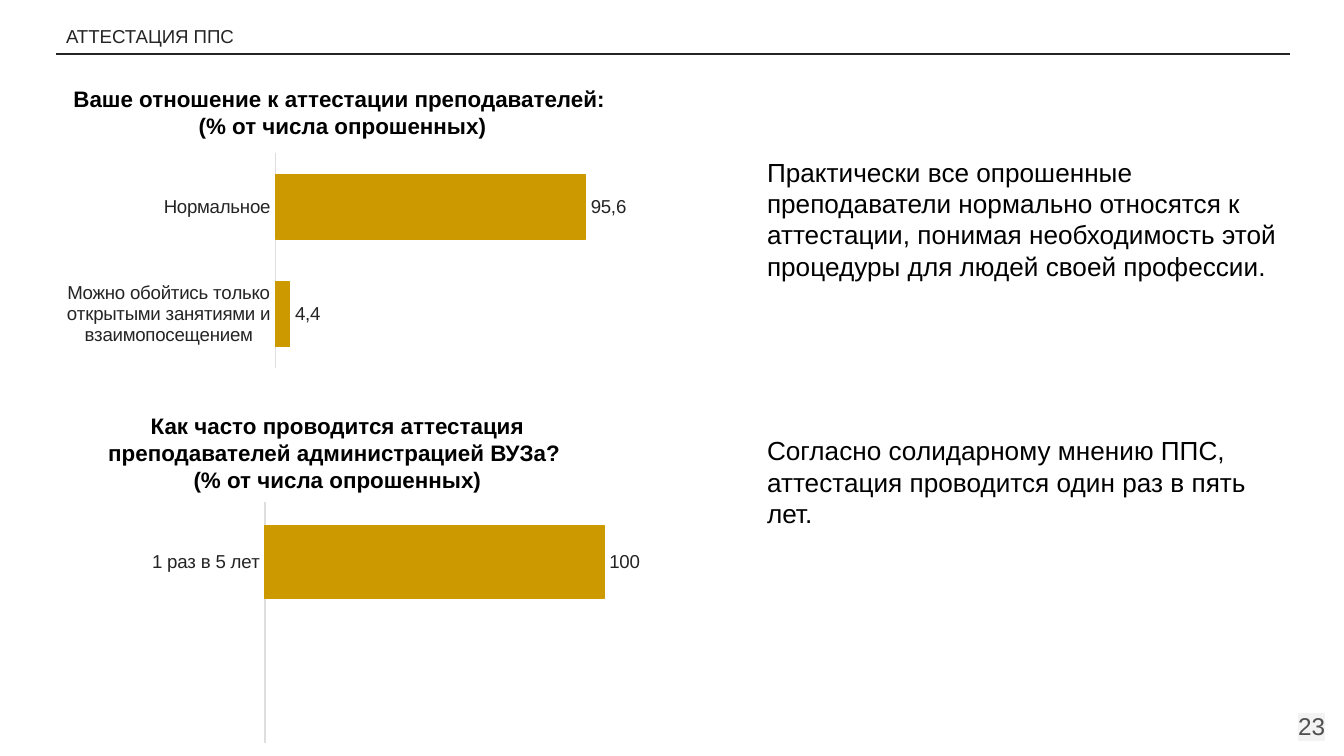
from dataclasses import dataclass
from typing import NamedTuple

from lxml.etree import SubElement
from pptx import Presentation
from pptx.chart.data import CategoryChartData
from pptx.dml.color import RGBColor
from pptx.enum.chart import XL_CHART_TYPE, XL_LABEL_POSITION, XL_TICK_MARK
from pptx.enum.shapes import MSO_CONNECTOR
from pptx.enum.text import PP_ALIGN
from pptx.oxml import parse_xml
from pptx.oxml.ns import nsdecls, qn
from pptx.util import Pt

EMU_PER_PX = 6804


@dataclass(frozen=True)
class Theme:
    font: str = "Arial"
    ink: str = "242424"
    text: str = "000000"
    bar: str = "CC9900"
    axis: str = "DEDEDE"
    number: str = "505050"
    highlight: str = "F3F3F3"
    small: int = 10
    heading: int = 12
    folio: int = 13
    body: int = 14
    hairline: float = 0.75


THEME = Theme()


class Box(NamedTuple):
    left: int
    top: int
    width: int
    height: int

    def inner(self, left, top, width, height):
        return Box(self.left + left, self.top + top, width, height)

    def emu(self):
        return [px(value) for value in self]


def px(value):
    return value * EMU_PER_PX


def color(name):
    return RGBColor.from_string(name)


def set_font(font, size, ink, bold=False):
    font.name = THEME.font
    font.size = Pt(size)
    font.bold = bold
    font.color.rgb = color(ink)


def add_text(page, box, lines, size, ink, bold=False,
             align=PP_ALIGN.LEFT, inset=13, top_inset=7, gap=0):
    frame = page.shapes.add_textbox(*box.emu()).text_frame
    frame.word_wrap = True
    frame.margin_left = frame.margin_right = px(inset)
    frame.margin_top, frame.margin_bottom = px(top_inset), px(7)
    for index, line in enumerate(lines):
        para = frame.add_paragraph() if index else frame.paragraphs[0]
        para.add_run().text = line
        para.alignment = align
        para.space_before = Pt(gap if index else 0)
        set_font(para.font, size, ink, bold)
    return frame


def add_header(page, box, title):
    add_text(page, box.inner(-3, 0, 663, 40), [title],
             THEME.small, THEME.ink, top_inset=14)
    rule_top = px(box.top + box.height)
    rule = page.shapes.add_connector(
        MSO_CONNECTOR.STRAIGHT, px(box.left), rule_top,
        px(box.left + box.width), rule_top)
    rule.line.color.rgb = color(THEME.ink)
    rule.line.width = Pt(THEME.hairline)
    SubElement(rule.element.spPr, qn("a:effectLst"))


def add_page_number(page, box, number):
    frame = add_text(page, box, [number], THEME.folio, THEME.number,
                     align=PP_ALIGN.RIGHT, top_inset=13)
    span = frame.paragraphs[0].runs[0]
    highlight = SubElement(span.font._element, qn("a:highlight"))
    SubElement(highlight, qn("a:srgbClr"), val=THEME.highlight)


def set_plot_layout(chart, layout):
    area = chart._chartSpace.chart.plotArea
    for old in area.findall(qn("c:layout")):
        area.remove(old)
    places = "".join(f'<c:{key} val="{value}"/>'
                     for key, value in zip("xywh", layout))
    area.insert(0, parse_xml(
        f'<c:layout {nsdecls("c")}><c:manualLayout>'
        '<c:layoutTarget val="inner"/>'
        '<c:xMode val="edge"/><c:yMode val="edge"/>'
        f'{places}</c:manualLayout></c:layout>'))


def add_value_labels(series, answers, number_format):
    labels = series.data_labels
    labels.show_value = True
    labels.number_format = number_format
    labels.number_format_is_linked = False
    labels.position = XL_LABEL_POSITION.OUTSIDE_END
    set_font(labels.font, THEME.small, THEME.ink)
    for index, (name, value) in enumerate(answers):
        if isinstance(value, float):
            label = series.points[index].data_label
            para = label.text_frame.paragraphs[0]
            para.add_run().text = f"{value:.1f}".replace(".", ",")
            set_font(para.font, THEME.small, THEME.ink)
            label.position = XL_LABEL_POSITION.OUTSIDE_END


def add_bar_chart(page, box, answers, layout, number_format):
    data = CategoryChartData(number_format=number_format)
    data.categories = [name for name, value in answers]
    data.add_series("Series 1", [value for name, value in answers])
    chart = page.shapes.add_chart(
        XL_CHART_TYPE.BAR_CLUSTERED, *box.emu(), data).chart
    chart.has_title = chart.has_legend = False
    set_font(chart.font, THEME.small, THEME.ink)
    set_plot_layout(chart, layout)

    values = chart.value_axis
    values.minimum_scale, values.maximum_scale = 0, 120
    values.has_major_gridlines = False
    values.visible = False

    names = chart.category_axis
    names.major_tick_mark = names.minor_tick_mark = XL_TICK_MARK.NONE
    names.format.line.color.rgb = color(THEME.axis)
    names.format.line.width = Pt(THEME.hairline)
    set_font(names.tick_labels.font, THEME.small, THEME.ink)

    plot = chart.plots[0]
    plot.gap_width = 66
    plot.vary_by_categories = False
    series = plot.series[0]
    series.format.fill.solid()
    series.format.fill.fore_color.rgb = color(THEME.bar)
    series.format.line.color.rgb = color(THEME.bar)
    series.format.line.width = Pt(THEME.hairline)
    add_value_labels(series, answers, number_format)


def add_question(page, box, heading, heading_box, top_inset,
                 chart_box, answers, layout, number_format):
    add_text(page, box.inner(*heading_box), heading, THEME.heading,
             THEME.text, bold=True, align=PP_ALIGN.CENTER,
             top_inset=top_inset)
    add_bar_chart(page, box.inner(*chart_box), answers, layout, number_format)


def add_findings(page, box, findings):
    add_text(page, box, findings, THEME.body, THEME.text, gap=82)


def main():
    deck = Presentation()
    deck.slide_width, deck.slide_height = px(1344), px(756)
    page = deck.slides.add_slide(deck.slide_layouts[6])
    add_header(page, Box(56, 11, 1234, 43), "АТТЕСТАЦИЯ ППС")
    add_question(
        page, Box(50, 78, 658, 300),
        ["Ваше отношение к аттестации преподавателей: ",
         "(% от числа опрошенных)"],
        (0, 0, 585, 67), 7, (15, 66, 638, 233),
        [("Можно обойтись только открытыми занятиями и взаимопосещением", 4.4),
         ("Нормальное", 95.6)],
        (0.33, 0.04, 0.61, 0.92), "0.0")
    add_question(
        page, Box(5, 378, 667, 368),
        ["Как часто проводится аттестация преподавателей администрацией ВУЗа? ",
         "(% от числа опрошенных)"],
        (46, 0, 573, 122), 34, (0, 123, 667, 245),
        [("", None), ("1 раз в 5 лет", 100)],
        (0.39, 0, 0.61, 0.99), "0")
    add_findings(page, Box(754, 149, 552, 499), [
        "Практически все опрошенные преподаватели нормально относятся к "
        "аттестации, понимая необходимость этой процедуры для людей своей "
        "профессии.",
        "Согласно солидарному мнению ППС, аттестация проводится один раз "
        "в пять лет."])
    add_page_number(page, Box(1257, 698, 81, 58), "23")
    deck.save("out.pptx")


if __name__ == "__main__":
    main()
